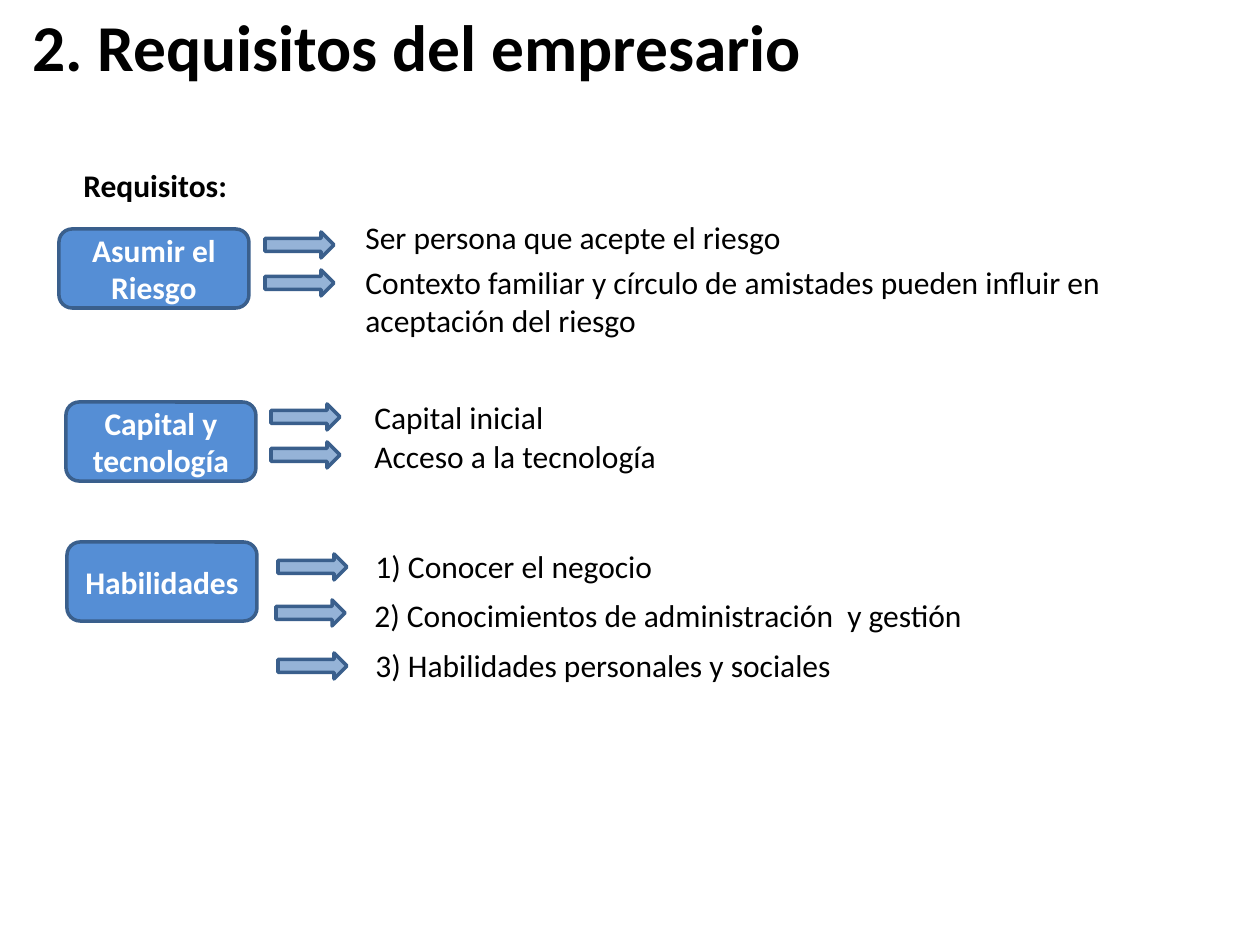
from pptx import Presentation
from pptx.dml.color import RGBColor
from pptx.enum.shapes import MSO_SHAPE
from pptx.enum.text import MSO_ANCHOR, MSO_AUTO_SIZE, PP_ALIGN
from pptx.util import Emu, Pt

ROUND_RECT = MSO_SHAPE.ROUNDED_RECTANGLE
RIGHT_ARROW = MSO_SHAPE.RIGHT_ARROW
MIDDLE = MSO_ANCHOR.MIDDLE
CENTER = PP_ALIGN.CENTER
GROW = MSO_AUTO_SIZE.SHAPE_TO_FIT_TEXT

PX_PER_INCH = 126
FONT = "Calibri"
COLORS = {
    "box": "558ED5",
    "arrow": "95B3D7",
    "outline": "3A5F8C",
    "text": "000000",
    "box_text": "FFFFFF",
}
BOX_SIZE = (190, 79)
ARROW_SIZE = (69, 26)
LINE_H = 50

# Each requirement: label, box position, and its points as
# (text, arrow position, text position and size).
REQUIREMENTS = [
    ("Asumir el Riesgo", (59, 229), [
        ("Ser persona que acepte el riesgo",
         (265, 232), (353, 212, 476, LINE_H)),
        ("Contexto familiar y círculo de amistades pueden influir en "
         "aceptación del riesgo",
         (265, 270), (353, 257, 774, 89)),
    ]),
    ("Capital y tecnología", (66, 402), [
        ("Capital inicial", (271, 404), (362, 392, 476, LINE_H)),
        ("Acceso a la tecnología", (271, 442), (362, 431, 476, LINE_H)),
    ]),
    ("Habilidades", (67, 542), [
        ("1) Conocer el negocio", (278, 554), (363, 541, 324, LINE_H)),
        ("2) Conocimientos de administración  y gestión",
         (276, 600), (362, 590, 649, LINE_H)),
        ("3) Habilidades personales y sociales",
         (278, 653), (363, 640, 515, LINE_H)),
    ]),
]


def px(n):
    return Emu(round(n * 914400 / PX_PER_INCH))


def rgb(name):
    return RGBColor.from_string(COLORS[name])


def set_text(tf, text, size=18, color="text", bold=False):
    tf.word_wrap = True
    tf.text = text
    font = tf.paragraphs[0].runs[0].font
    font.name = FONT
    font.size = Pt(size)
    font.bold = bold
    font.color.rgb = rgb(color)


def add_outlined_shape(slide, kind, pos, size, fill):
    sp = slide.shapes.add_shape(kind, *map(px, pos + size))
    sp.shadow.inherit = False
    sp.fill.solid()
    sp.fill.fore_color.rgb = rgb(fill)
    sp.line.color.rgb = rgb("outline")
    sp.line.width = Pt(2)
    return sp


def add_box(slide, text, pos):
    tf = add_outlined_shape(slide, ROUND_RECT, pos, BOX_SIZE, "box").text_frame
    set_text(tf, text, color="box_text", bold=True)
    tf.vertical_anchor = MIDDLE
    tf.paragraphs[0].alignment = CENTER


def add_arrow(slide, pos):
    add_outlined_shape(slide, RIGHT_ARROW, pos, ARROW_SIZE, "arrow")


def add_label(slide, text, area, bold=False):
    tf = slide.shapes.add_textbox(*map(px, area)).text_frame
    set_text(tf, text, bold=bold)
    tf.auto_size = GROW


def add_title(slide, text):
    tf = slide.shapes.add_textbox(*map(px, (20, 6, 1134, 79))).text_frame
    set_text(tf, text, size=37.4, bold=True)
    tf.vertical_anchor = MIDDLE


def main():
    prs = Presentation()
    prs.slide_width, prs.slide_height = px(1260), px(945)
    slide = prs.slides.add_slide(prs.slide_layouts[6])

    add_title(slide, "2. Requisitos del empresario")
    add_label(slide, "Requisitos:", (71, 160, 169, LINE_H), bold=True)
    for name, box_pos, points in REQUIREMENTS:
        add_box(slide, name, box_pos)
        for text, arrow_pos, text_area in points:
            add_arrow(slide, arrow_pos)
            add_label(slide, text, text_area)

    prs.save("out.pptx")


if __name__ == "__main__":
    main()
